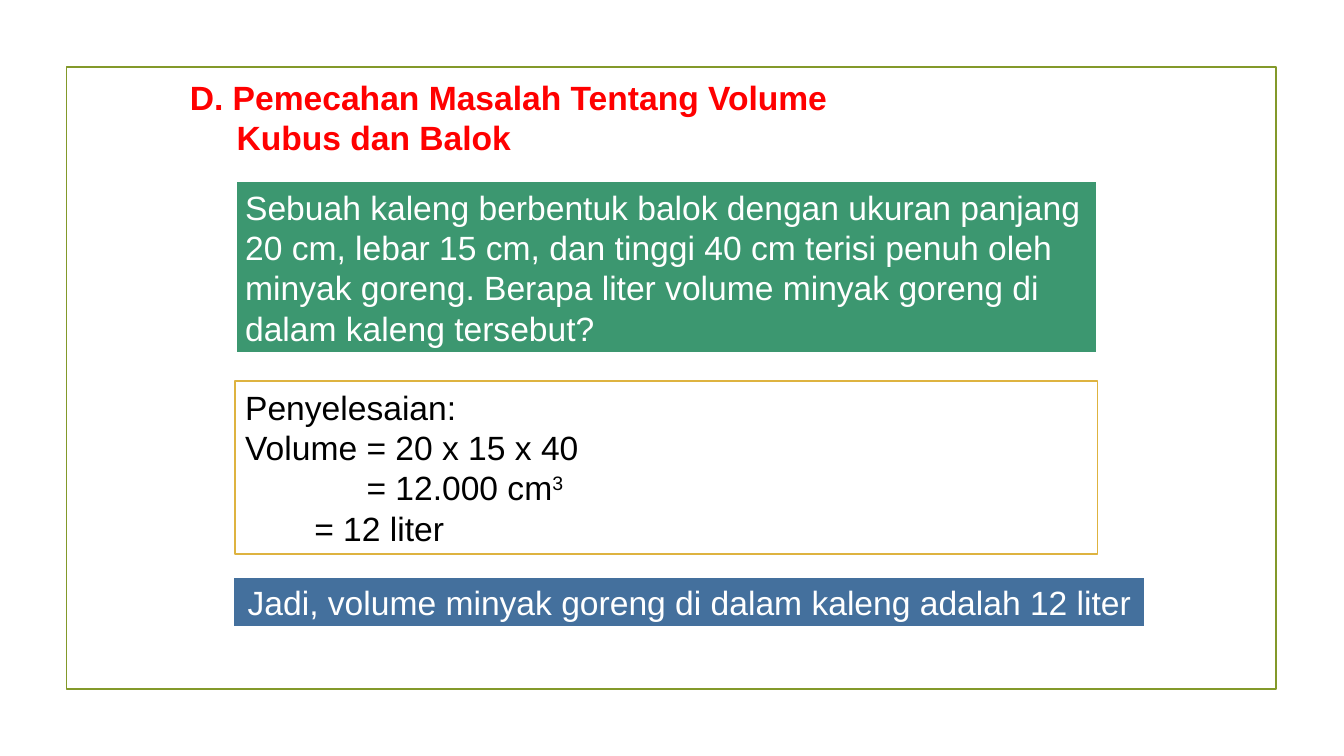
from pptx import Presentation
from pptx.dml.color import RGBColor
from pptx.enum.shapes import MSO_SHAPE
from pptx.enum.text import MSO_ANCHOR, MSO_AUTO_SIZE, PP_ALIGN
from pptx.util import Pt

RECT = MSO_SHAPE.RECTANGLE
MIDDLE, TOP = MSO_ANCHOR.MIDDLE, MSO_ANCHOR.TOP
LEFT, CENTER = PP_ALIGN.LEFT, PP_ALIGN.CENTER
NO_FIT = MSO_AUTO_SIZE.NONE

WHITE = RGBColor(0xFF, 0xFF, 0xFF)
BLACK = RGBColor(0x00, 0x00, 0x00)
RED = RGBColor(0xFF, 0x00, 0x00)
OLIVE = RGBColor(0x83, 0x99, 0x2A)
GOLD = RGBColor(0xDE, 0xB3, 0x40)
GREEN = RGBColor(0x3C, 0x97, 0x70)
BLUE = RGBColor(0x44, 0x70, 0x9D)

TITLE_ONLY = 5


class SlideBuilder:
    """Holds the text style and the current slide."""

    font = {"name": "Arial", "size": Pt(24), "bold": False}
    line_spacing = Pt(28.8)

    def __init__(self, prs):
        self.s = prs.slides.add_slide(prs.slide_layouts[TITLE_ONLY])

    def add_text(self, sp, lines, color, align=LEFT, anchor=MIDDLE, **extra):
        """Each line is (left indent, text) or (left indent, text, superscript)."""
        tf = sp.text_frame
        frame_format = {"word_wrap": True, "auto_size": NO_FIT, "vertical_anchor": anchor,
                        "margin_left": Pt(7.2), "margin_right": Pt(7.2),
                        "margin_top": Pt(3.6), "margin_bottom": Pt(3.6)}
        for key, value in frame_format.items():
            setattr(tf, key, value)
        for i, (indent, *parts) in enumerate(lines):
            p = tf.paragraphs[0] if i == 0 else tf.add_paragraph()
            p.alignment = align
            p.line_spacing = self.line_spacing
            p.space_before = Pt(0)
            if indent:
                p._p.get_or_add_pPr().set("marL", str(Pt(indent)))
            for n, text in enumerate(parts):
                r = p.add_run()
                r.text = text
                for key, value in {**self.font, **extra}.items():
                    setattr(r.font, key, value)
                r.font.color.rgb = color
                if n == 1:
                    r._r.get_or_add_rPr().set("baseline", "30000")

    def title(self, x, y, w, h, lines, color):
        sp = self.s.shapes.title
        sp.left, sp.top, sp.width, sp.height = Pt(x), Pt(y), Pt(w), Pt(h)
        self.add_text(sp, lines, color, anchor=TOP, bold=True)

    def box(self, x, y, w, h, line, weight, fill=None):
        sp = self.s.shapes.add_shape(RECT, Pt(x), Pt(y), Pt(w), Pt(h))
        sp.shadow.inherit = False
        if fill is None:
            sp.fill.background()
        else:
            sp.fill.solid()
            sp.fill.fore_color.rgb = fill
        sp.line.color.rgb = line
        sp.line.width = Pt(weight)
        return sp


def main():
    prs = Presentation()
    prs.slide_width, prs.slide_height = Pt(960), Pt(540)
    b = SlideBuilder(prs)

    # Frame and heading
    b.box(47.6, 48, 864, 444.4, OLIVE, 1.25)
    b.title(128.4, 51.4, 522, 65.4,
            [(0, "D. Pemecahan Masalah Tentang Volume"), (33.4, "Kubus dan Balok")], RED)

    # Problem
    problem = b.box(168, 129, 616, 123.6, WHITE, 2, GREEN)
    b.add_text(problem, [(0, "Sebuah kaleng berbentuk balok dengan ukuran panjang 20 cm, "
                             "lebar 15 cm, dan tinggi 40 cm terisi penuh oleh minyak goreng. "
                             "Berapa liter volume minyak goreng di dalam kaleng tersebut?")], WHITE)

    # Solution
    solution = b.box(168, 272, 616, 123.6, GOLD, 1.25, WHITE)
    b.add_text(solution, [(0, "Penyelesaian:"),
                          (0, "Volume = 20 x 15 x 40"),
                          (86.7, "= 12.000 cm", "3"),
                          (49.4, "= 12 liter")], BLACK)

    # Conclusion
    conclusion = b.box(166.4, 412, 652, 36.2, WHITE, 2, BLUE)
    b.add_text(conclusion, [(0, "Jadi, volume minyak goreng di dalam kaleng adalah 12 liter")],
               WHITE, CENTER)

    prs.save("out.pptx")


if __name__ == "__main__":
    main()
